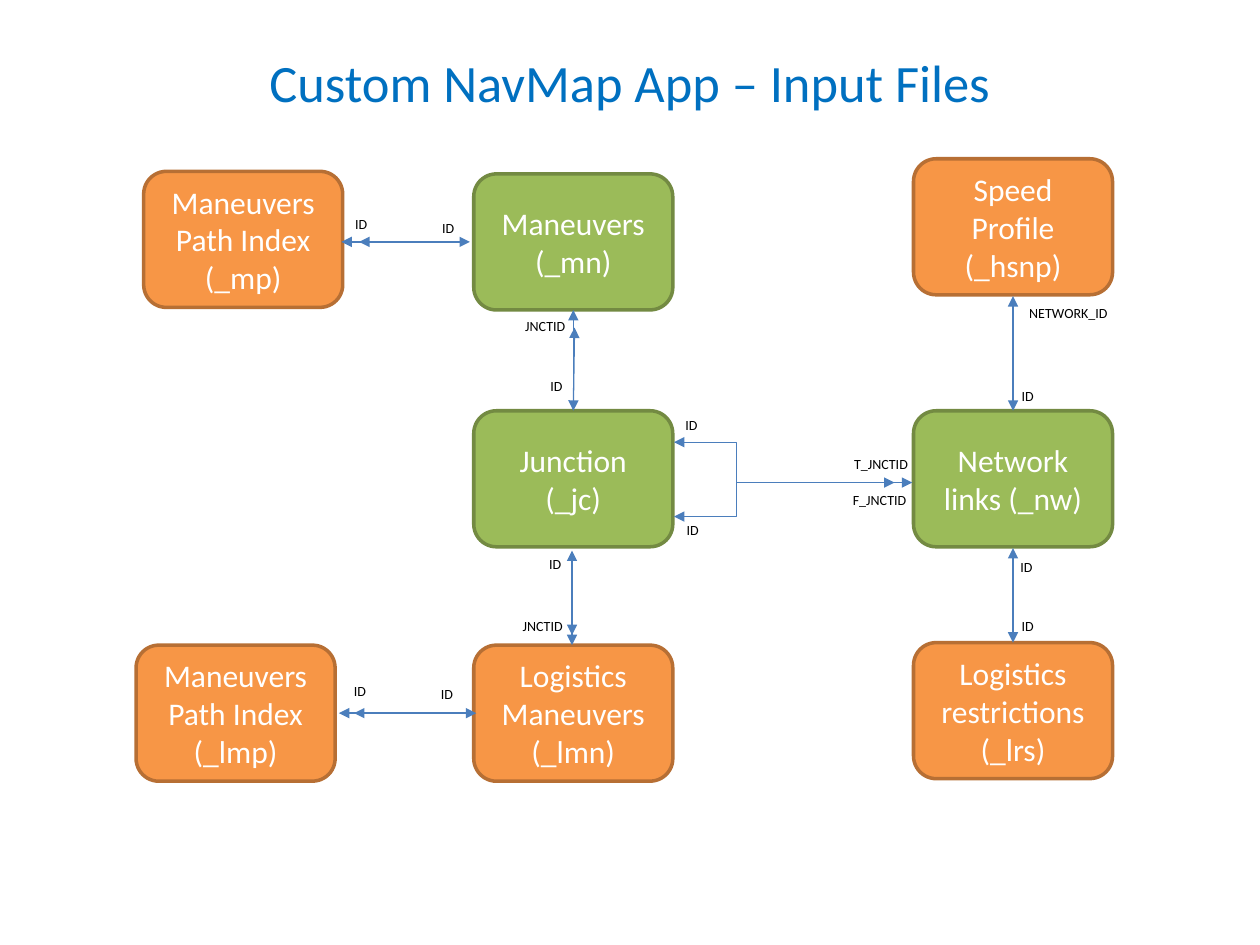
from lxml import etree
from pptx import Presentation
from pptx.dml.color import RGBColor
from pptx.enum.shapes import MSO_CONNECTOR, MSO_SHAPE
from pptx.enum.text import MSO_ANCHOR, PP_ALIGN
from pptx.oxml.ns import qn
from pptx.util import Inches, Pt

STRAIGHT, ELBOW = MSO_CONNECTOR.STRAIGHT, MSO_CONNECTOR.ELBOW
ROUNDED = MSO_SHAPE.ROUNDED_RECTANGLE
LEFT, CENTER = PP_ALIGN.LEFT, PP_ALIGN.CENTER
MIDDLE = MSO_ANCHOR.MIDDLE

TITLE_BLUE = RGBColor(0x00, 0x70, 0xC0)
ARROW_BLUE = RGBColor(0x4B, 0x7E, 0xBC)
GREEN = RGBColor(0x9B, 0xBB, 0x59)
GREEN_EDGE = RGBColor(0x73, 0x8A, 0x42)
ORANGE = RGBColor(0xF7, 0x96, 0x46)
ORANGE_EDGE = RGBColor(0xB7, 0x6F, 0x34)
WHITE = RGBColor(0xFF, 0xFF, 0xFF)
BLACK = RGBColor(0x00, 0x00, 0x00)

FONT = "Calibri"
BOX_WIDTH, BOX_HEIGHT = 1.58, 1.08
LABEL_HEIGHT = 0.24
LABEL_WIDTHS = {"ID": 0.32, "JNCTID": 0.53, "T_JNCTID": 0.64,
                "F_JNCTID": 0.66, "NETWORK_ID": 0.84}
MIDDLE_COLUMN, RIGHT_COLUMN = 3.76, 7.25

CORE_FILES = [
    ("Network links (_nw)", RIGHT_COLUMN, 3.26),
    ("Junction (_jc)", MIDDLE_COLUMN, 3.26),
    ("Maneuvers (_mn)", MIDDLE_COLUMN, 1.38),
]
EXTRA_FILES = [
    ("Maneuvers Path Index (_mp)", 1.14, 1.36),
    ("Speed Profile (_hsnp)", RIGHT_COLUMN, 1.26),
    ("Logistics restrictions (_lrs)", RIGHT_COLUMN, 5.1),
    ("Logistics Maneuvers (_lmn)", MIDDLE_COLUMN, 5.12),
    ("Maneuvers Path Index (_lmp)", 1.08, 5.12),
]
ONE_WAY_ARROWS = [
    ((6.33, 3.83), (7.1, 3.83)),
    ((6.6, 3.83), (7.24, 3.83)),
    ((3.6, 1.92), (2.85, 1.92)),
    ((4.55, 3.07), (4.55, 2.46)),
    ((3.56, 5.66), (2.81, 5.66)),
    ((4.54, 4.64), (4.54, 5.04)),
]
TWO_WAY_ARROWS = [
    ((8.04, 2.35), (8.04, 3.26)),
    ((8.04, 5.1), (8.04, 4.35)),
    ((2.71, 1.92), (3.73, 1.92)),
    ((4.54, 5.12), (4.54, 4.37)),
    ((4.55, 3.26), (4.56, 2.6)),
    ((2.69, 5.66), (3.78, 5.66)),
]
JUNCTION_BRANCHES = [
    ((6.34, 3.83), (5.35, 4.1)),
    ((6.34, 3.83), (5.35, 3.51)),
]
KEY_LABELS = [
    ("T_JNCTID", 6.68, 3.57), ("F_JNCTID", 6.67, 3.85),
    ("ID", 8.01, 3.03), ("ID", 5.35, 4.09), ("ID", 4.27, 2.95),
    ("JNCTID", 4.07, 2.47), ("ID", 3.41, 1.69), ("ID", 2.72, 1.66),
    ("ID", 4.26, 4.36), ("JNCTID", 4.05, 4.85),
    ("ID", 3.4, 5.39), ("ID", 2.71, 5.37), ("ID", 5.34, 3.26),
    ("NETWORK_ID", 8.07, 2.37), ("ID", 8, 4.38), ("ID", 8.01, 4.85),
]


def write_text(shape, text, *, size, color, align=LEFT, anchor=None, wrap=True):
    frame = shape.text_frame
    frame.word_wrap = wrap
    if anchor is not None:
        frame.vertical_anchor = anchor
    paragraph = frame.paragraphs[0]
    paragraph.alignment = align
    run = paragraph.add_run()
    run.text = text
    run.font.name = FONT
    run.font.size = Pt(size)
    run.font.color.rgb = color


def add_title(slide, text):
    title = slide.shapes.title
    title.left, title.top = Inches(0.5), Inches(0.3)
    title.width, title.height = Inches(9), Inches(0.7)
    write_text(title, text, size=30, color=TITLE_BLUE, align=CENTER, anchor=MIDDLE)


def add_file_box(slide, text, left, top, fill, edge):
    box = slide.shapes.add_shape(ROUNDED, Inches(left), Inches(top),
                                 Inches(BOX_WIDTH), Inches(BOX_HEIGHT))
    box.shadow.inherit = False
    box.fill.solid()
    box.fill.fore_color.rgb = fill
    box.line.color.rgb = edge
    box.line.width = Pt(2)
    write_text(box, text, size=18, color=WHITE, align=CENTER, anchor=MIDDLE)


def add_arrow(slide, start, end, kind=STRAIGHT, two_way=False):
    points = [Inches(value) for value in (*start, *end)]
    arrow = slide.shapes.add_connector(kind, *points)
    arrow.line.color.rgb = ARROW_BLUE
    arrow.line.width = Pt(0.75)
    line = arrow.line._get_or_add_ln()
    for tag in ("a:headEnd", "a:tailEnd") if two_way else ("a:tailEnd",):
        etree.SubElement(line, qn(tag), type="triangle")
    etree.SubElement(arrow._element.spPr, qn("a:effectLst"))


def add_key_label(slide, text, left, top):
    label = slide.shapes.add_textbox(Inches(left), Inches(top),
                                     Inches(LABEL_WIDTHS[text]), Inches(LABEL_HEIGHT))
    write_text(label, text, size=8, color=BLACK, wrap=False)


def main():
    presentation = Presentation()
    presentation.slide_width, presentation.slide_height = Inches(10), Inches(7.5)
    title_only = presentation.slide_layouts[5]
    slide = presentation.slides.add_slide(title_only)

    add_title(slide, "Custom NavMap App – Input Files")
    for text, left, top in CORE_FILES:
        add_file_box(slide, text, left, top, GREEN, GREEN_EDGE)
    for text, left, top in EXTRA_FILES:
        add_file_box(slide, text, left, top, ORANGE, ORANGE_EDGE)
    for start, end in JUNCTION_BRANCHES:
        add_arrow(slide, start, end, kind=ELBOW)
    for start, end in ONE_WAY_ARROWS:
        add_arrow(slide, start, end)
    for start, end in TWO_WAY_ARROWS:
        add_arrow(slide, start, end, two_way=True)
    for text, left, top in KEY_LABELS:
        add_key_label(slide, text, left, top)

    presentation.save("out.pptx")


if __name__ == "__main__":
    main()
